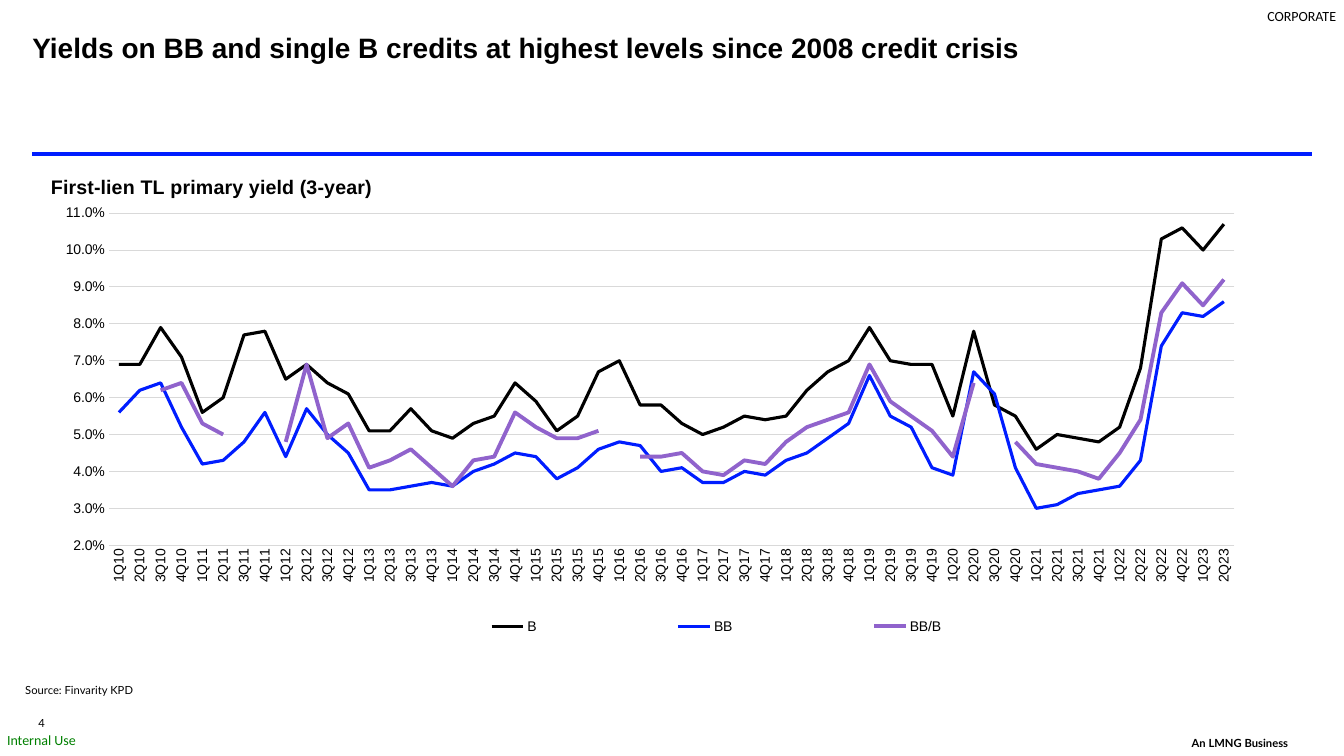
from lxml import etree
from pptx import Presentation
from pptx.chart.data import CategoryChartData
from pptx.dml.color import RGBColor
from pptx.enum.chart import XL_CHART_TYPE as ChartType, XL_LEGEND_POSITION as LegendPosition
from pptx.enum.chart import XL_MARKER_STYLE as MarkerStyle, XL_TICK_MARK as TickMark
from pptx.enum.shapes import MSO_CONNECTOR as Connector
from pptx.enum.text import MSO_ANCHOR as Anchor, MSO_AUTO_SIZE as AutoSize, PP_ALIGN as Align
from pptx.oxml.ns import qn
from pptx.util import Inches, Pt

BLACK = RGBColor(0x00, 0x00, 0x00)
BLUE = RGBColor(0x00, 0x1D, 0xFF)
PURPLE = RGBColor(0x90, 0x63, 0xCC)
GREY = RGBColor(0xD9, 0xD9, 0xD9)
GREEN = RGBColor(0x00, 0x80, 0x00)

# Content
TITLE = "Yields on BB and single B credits at highest levels since 2008 credit crisis"
CHART_TITLE = "First-lien TL primary yield (3-year)"
QUARTERS = [f"{quarter}Q{year}" for year in range(10, 24) for quarter in range(1, 5)][:54]

# Name, colour, line width in points, yields in percent by quarter
SERIES = [
    ("B", BLACK, 2.25, [
        6.9, 6.9, 7.9, 7.1, 5.6, 6.0, 7.7, 7.8, 6.5, 6.9, 6.4, 6.1, 5.1, 5.1, 5.7, 5.1, 4.9, 5.3,
        5.5, 6.4, 5.9, 5.1, 5.5, 6.7, 7.0, 5.8, 5.8, 5.3, 5.0, 5.2, 5.5, 5.4, 5.5, 6.2, 6.7, 7.0,
        7.9, 7.0, 6.9, 6.9, 5.5, 7.8, 5.8, 5.5, 4.6, 5.0, 4.9, 4.8, 5.2, 6.8, 10.3, 10.6, 10.0, 10.7]),
    ("BB", BLUE, 2.25, [
        5.6, 6.2, 6.4, 5.2, 4.2, 4.3, 4.8, 5.6, 4.4, 5.7, 5.0, 4.5, 3.5, 3.5, 3.6, 3.7, 3.6, 4.0,
        4.2, 4.5, 4.4, 3.8, 4.1, 4.6, 4.8, 4.7, 4.0, 4.1, 3.7, 3.7, 4.0, 3.9, 4.3, 4.5, 4.9, 5.3,
        6.6, 5.5, 5.2, 4.1, 3.9, 6.7, 6.1, 4.1, 3.0, 3.1, 3.4, 3.5, 3.6, 4.3, 7.4, 8.3, 8.2, 8.6]),
    ("BB/B", PURPLE, 2.75, [
        6.4, None, 6.2, 6.4, 5.3, 5.0, None, None, 4.8, 6.9, 4.9, 5.3, 4.1, 4.3, 4.6, 4.1, 3.6, 4.3,
        4.4, 5.6, 5.2, 4.9, 4.9, 5.1, None, 4.4, 4.4, 4.5, 4.0, 3.9, 4.3, 4.2, 4.8, 5.2, 5.4, 5.6,
        6.9, 5.9, 5.5, 5.1, 4.4, 6.4, None, 4.8, 4.2, 4.1, 4.0, 3.8, 4.5, 5.4, 8.3, 9.1, 8.5, 9.2]),
]

# Text, box (left, top, width, height), font, size, colour, bold, anchor, wrap
LABELS = [
    ("4", (0.38, 7.04, 0.39, 0.2), "Lato", 8, BLACK, False, Anchor.BOTTOM, False),
    ("An LMNG Business", (11.82, 7.24, 1.5, 0.2), "Lato", 8, BLACK, True, Anchor.BOTTOM, True),
    ("CORPORATE", (12.57, 0.07, 0.73, 0.17), "Calibri", 10, BLACK, False, Anchor.TOP, False),
    ("Internal Use", (0.07, 7.26, 0.72, 0.17), "Calibri", 10, GREEN, False, Anchor.TOP, False),
    ("Source: Finvarity KPD", (0.25, 6.64, 3.19, 0.27), "Lato", 8, BLACK, False, Anchor.BOTTOM, True),
]


def style_font(font, name, size, color, bold=False):
    font.name, font.size, font.bold = name, Pt(size), bold
    font.color.rgb = color


def clear_margins(frame):
    frame.margin_left = frame.margin_right = frame.margin_top = frame.margin_bottom = 0


def add_label(slide, text, box, font, size, color, bold, anchor, wrap):
    frame = slide.shapes.add_textbox(*map(Inches, box)).text_frame
    clear_margins(frame)
    frame.word_wrap, frame.vertical_anchor = wrap, anchor
    frame.text = text
    style_font(frame.paragraphs[0].font, font, size, color, bold)


def place_part(part, index, **fractions):
    """Give a chart part a manual layout in fractions of the chart area."""
    for old in part.findall(qn("c:layout")):
        part.remove(old)
    layout = etree.Element(qn("c:layout"))
    manual = etree.SubElement(layout, qn("c:manualLayout"))
    if part.tag == qn("c:plotArea"):
        etree.SubElement(manual, qn("c:layoutTarget")).set("val", "inner")
    for axis in ("x", "y"):
        etree.SubElement(manual, qn(f"c:{axis}Mode")).set("val", "edge")
    for name, value in fractions.items():
        etree.SubElement(manual, qn(f"c:{name}")).set("val", str(value))
    part.insert(index, layout)


def add_yield_chart(slide):
    data = CategoryChartData(number_format="0.0%")
    data.categories = QUARTERS
    for name, _, _, yields in SERIES:
        data.add_series(name, [None if y is None else round(y / 100, 3) for y in yields])
    box = map(Inches, (0.42, 1.64, 12.38, 5))
    chart = slide.shapes.add_chart(ChartType.LINE, *box, data).chart
    style_font(chart.font, "Arial", 18, BLACK)

    # Lines
    plot = chart.plots[0]
    plot.vary_by_categories = False
    for series, (_, color, width, _) in zip(plot.series, SERIES):
        series.smooth = False
        series.marker.style = MarkerStyle.NONE
        series.format.line.color.rgb = color
        series.format.line.width = Pt(width)

    # Axes
    quarters, yields = chart.category_axis, chart.value_axis
    for axis in (quarters, yields):
        axis.major_tick_mark = axis.minor_tick_mark = TickMark.NONE
        style_font(axis.tick_labels.font, "Arial", 10, BLACK)
    yields.minimum_scale, yields.maximum_scale, yields.major_unit = 0.02, 0.11, 0.01
    yields.tick_labels.number_format = "0.0%"
    yields.tick_labels.number_format_is_linked = False
    yields.format.line.fill.background()
    for line in (quarters.format.line, yields.major_gridlines.format.line):
        line.color.rgb, line.width = GREY, Pt(0.75)

    # Title and legend
    heading = chart.chart_title.text_frame
    heading.text = CHART_TITLE
    style_font(heading.paragraphs[0].font, "Arial", 14, BLACK, True)
    chart.chart_title.include_in_layout = False
    chart.has_legend = True
    chart.legend.position = LegendPosition.BOTTOM
    chart.legend.include_in_layout = False
    style_font(chart.legend.font, "Arial", 10, BLACK)

    # Upright quarter labels and part positions
    root = chart.element if hasattr(chart, "element") else chart._chartSpace
    body = root.find(f".//{qn('c:catAx')}/{qn('c:txPr')}/{qn('a:bodyPr')}")
    body.set("rot", "-5400000")
    body.set("vert", "horz")
    area = root.find(qn("c:chart"))
    place_part(area.find(qn("c:plotArea")), 0, x=0.053, y=0.095, w=0.902, h=0.659)
    place_part(area.find(qn("c:title")), 1, x=0.004, y=0.01)
    place_part(area.find(qn("c:legend")), 1, x=0.25, y=0.88, w=0.58, h=0.07)


def main():
    presentation = Presentation()
    presentation.slide_width, presentation.slide_height = Inches(13.33), Inches(7.5)
    slide = presentation.slides.add_slide(presentation.slide_layouts[5])

    # Title
    title = slide.shapes.title
    title.left, title.top, title.width, title.height = map(Inches, (0.32, 0.34, 12.68, 0.39))
    frame = title.text_frame
    frame.text = TITLE
    clear_margins(frame)
    frame.auto_size, frame.vertical_anchor = AutoSize.NONE, Anchor.TOP
    paragraph = frame.paragraphs[0]
    paragraph.alignment, paragraph.line_spacing = Align.LEFT, 0.9
    style_font(paragraph.font, "Arial", 20, BLACK, True)

    # Rule under the title
    rule = slide.shapes.add_connector(
        Connector.STRAIGHT, *map(Inches, (0.32, 1.53, 13.01, 1.53)))
    rule.line.color.rgb, rule.line.width = BLUE, Pt(3)
    etree.SubElement(rule._element.spPr, qn("a:effectLst"))

    add_yield_chart(slide)
    for label in LABELS:
        add_label(slide, *label)
    presentation.save("out.pptx")


if __name__ == "__main__":
    main()
